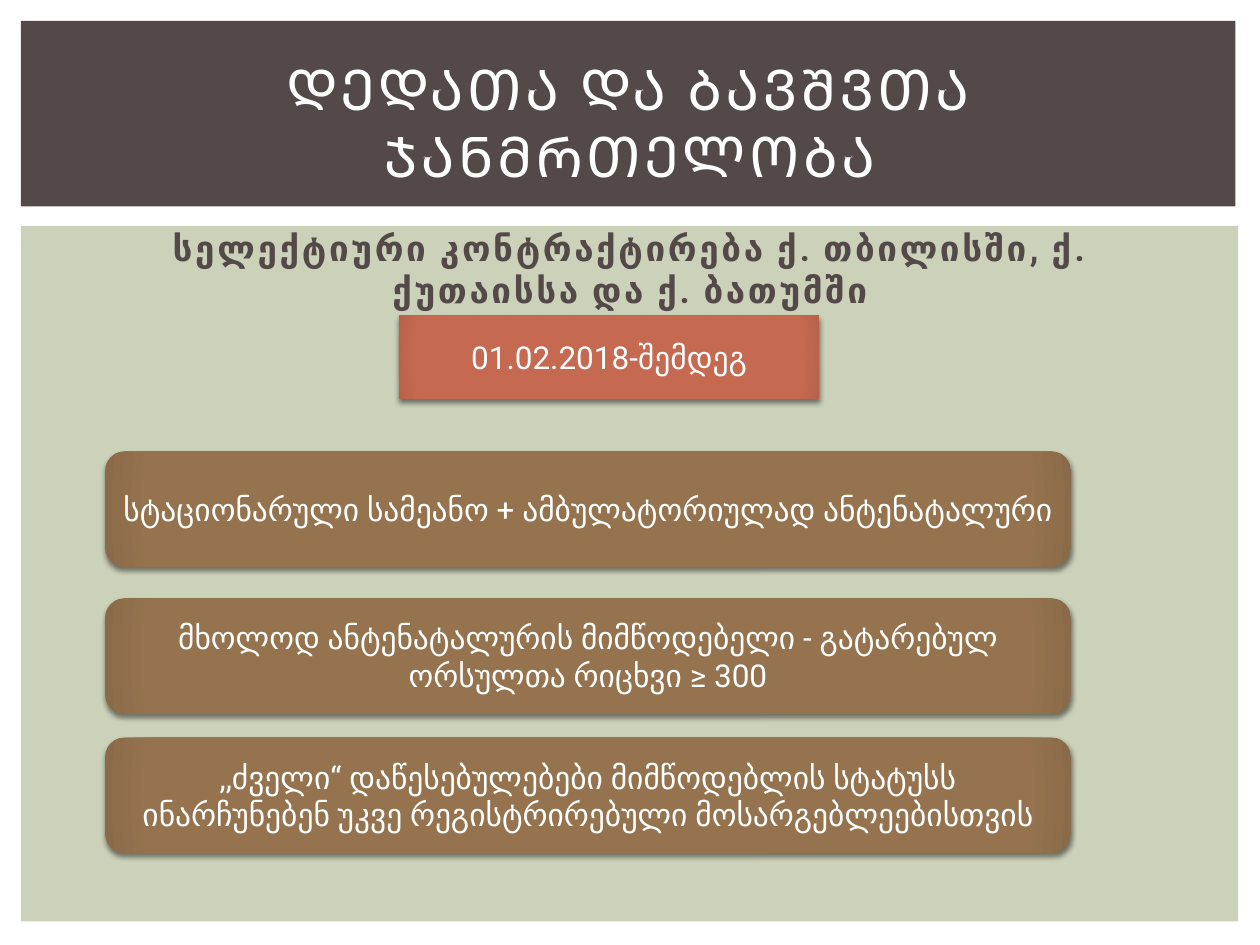
import pptx
import pptx.util
import pptx.dml.color
import pptx.enum.shapes
import pptx.enum.text
import pptx.oxml
import pptx.oxml.ns

Pt = pptx.util.Pt
RGB = pptx.dml.color.RGBColor
KIND = pptx.enum.shapes.MSO_SHAPE
ANCHOR = pptx.enum.text.MSO_ANCHOR
WHITE = RGB(0xFF, 0xFF, 0xFF)
SAGE = RGB(0xCC, 0xD1, 0xB9)
DARK = RGB(0x53, 0x49, 0x49)
CORAL = RGB(0xC6, 0x69, 0x51)
RUST = RGB(0xB8, 0x62, 0x4B)
BROWN = RGB(0x94, 0x73, 0x4E)
UMBER = RGB(0x8A, 0x6B, 0x49)
NS = pptx.oxml.ns.nsdecls("a")


def write(shape, text, size, color, anchor, bold=False, space=0):
    frame = shape.text_frame
    frame.text = text
    frame.word_wrap = True
    frame.auto_size = pptx.enum.text.MSO_AUTO_SIZE.NONE
    frame.vertical_anchor = anchor
    para = frame.paragraphs[0]
    para.alignment = pptx.enum.text.PP_ALIGN.CENTER
    run = para.runs[0]
    run.font.name = "Roboto"
    run.font.size = Pt(size)
    run.font.bold = bold
    run.font.color.rgb = color
    if space:
        run.font._element.set("spc", str(space))


def glow(shape, main, edge):
    shape.line.fill.background()
    stops = "".join(
        f'<a:gs pos="{pos}"><a:srgbClr val="{color}"/></a:gs>'
        for pos, color in ((0, main), (90000, main), (100000, edge))
    )
    grad = pptx.oxml.parse_xml(
        f'<a:gradFill {NS} rotWithShape="1"><a:gsLst>{stops}</a:gsLst>'
        '<a:path path="circle"><a:fillToRect l="100000" t="100000" '
        'r="100000" b="100000"/></a:path></a:gradFill>'
    )
    shade = pptx.oxml.parse_xml(
        f'<a:effectLst {NS}><a:outerShdw blurRad="{Pt(3)}" dist="{Pt(2)}" '
        'dir="5400000" rotWithShape="0"><a:srgbClr val="000000">'
        '<a:alpha val="45000"/></a:srgbClr></a:outerShdw></a:effectLst>'
    )
    props = shape._element.spPr
    props.insert(2, grad)
    props.append(shade)


deck = pptx.Presentation()
deck.slide_width = Pt(720)
deck.slide_height = Pt(540)
slide = deck.slides.add_slide(deck.slide_layouts[5])
shapes = slide.shapes
title = shapes.title

panels = [(129, 695.5, 397.5, SAGE), (12, 694, 106, DARK)]
for top, width, height, color in panels:
    panel = shapes.add_shape(KIND.RECTANGLE, Pt(12), Pt(top), Pt(width), Pt(height))
    panel.fill.solid()
    panel.fill.fore_color.rgb = color
    panel.line.fill.background()
    panel.shadow.inherit = False
    title._element.addprevious(panel._element)

title.left, title.top = Pt(30), Pt(28)
title.width, title.height = Pt(660), Pt(83)
write(title, "ᲓᲔᲓᲐᲗᲐ ᲓᲐ ᲑᲐᲕᲨᲕᲗᲐ ᲯᲐᲜᲛᲠᲗᲔᲚᲝᲑᲐ", 32, WHITE, ANCHOR.MIDDLE, space=200)

body = shapes.add_textbox(Pt(36), Pt(126), Pt(648), Pt(408))
write(body, "სელექტიური კონტრაქტირება ქ. თბილისში, ქ. ქუთაისსა და ქ. ბათუმში",
      20, DARK, ANCHOR.TOP, bold=True, space=150)
body.text_frame.paragraphs[0].space_before = Pt(4)

date = shapes.add_shape(KIND.RECTANGLE, Pt(228), Pt(180), Pt(240), Pt(48))
glow(date, CORAL, RUST)
write(date, "01.02.2018-შემდეგ", 18, WHITE, ANCHOR.MIDDLE)

rules = [
    (258, "სტაციონარული სამეანო + ამბულატორიულად ანტენატალური"),
    (342, "მხოლოდ ანტენატალურის მიმწოდებელი - გატარებულ ორსულთა რიცხვი ≥ 300"),
    (421.5, ",,ძველი“ დაწესებულებები მიმწოდებლის სტატუსს ინარჩუნებენ უკვე "
            "რეგისტრირებული მოსარგებლეებისთვის"),
]
for top, text in rules:
    card = shapes.add_shape(KIND.ROUNDED_RECTANGLE, Pt(60), Pt(top), Pt(552), Pt(66))
    glow(card, BROWN, UMBER)
    write(card, text, 18, WHITE, ANCHOR.MIDDLE)

deck.save("out.pptx")
